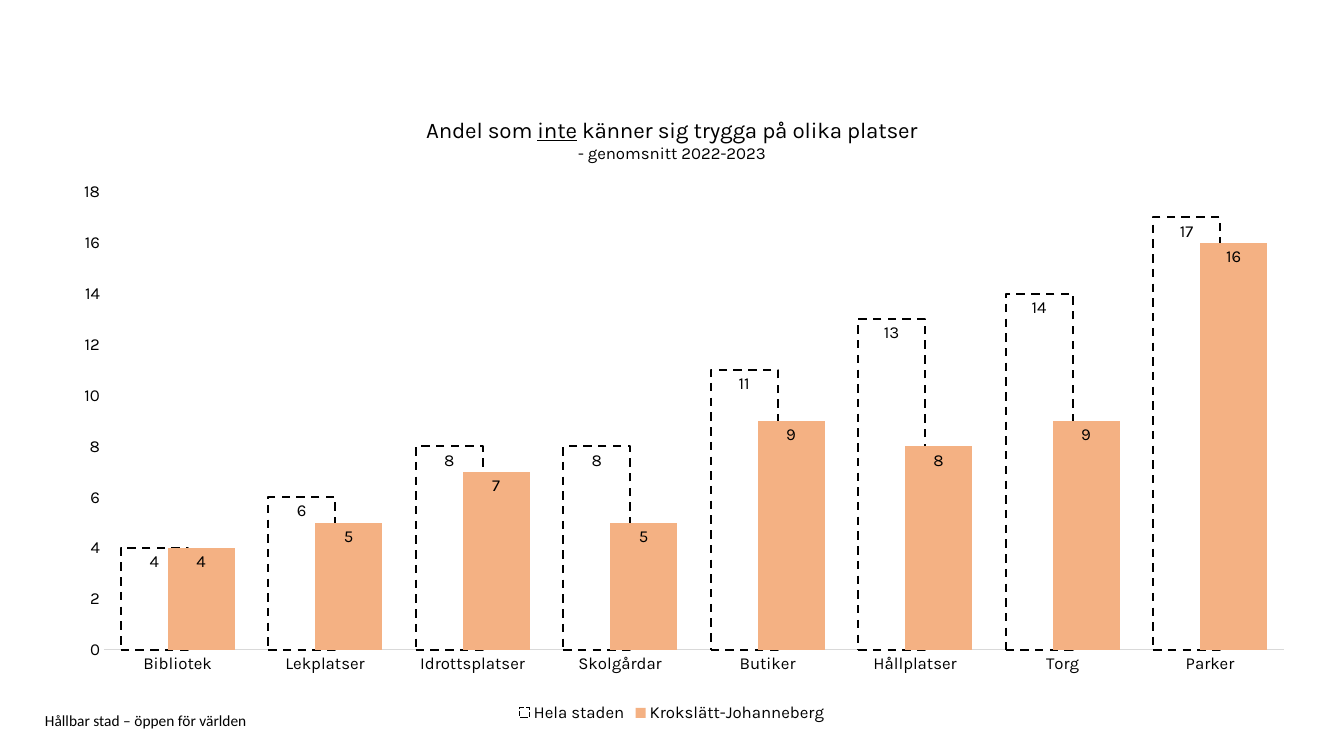
from lxml import etree
from pptx import Presentation
from pptx.chart.data import CategoryChartData
from pptx.dml.color import RGBColor
from pptx.enum.chart import XL_CHART_TYPE as ChartType
from pptx.enum.chart import XL_LABEL_POSITION as LabelPosition
from pptx.enum.chart import XL_LEGEND_POSITION as LegendPosition
from pptx.enum.chart import XL_TICK_MARK as TickMark
from pptx.enum.dml import MSO_LINE_DASH_STYLE as Dash
from pptx.enum.text import MSO_ANCHOR as Anchor
from pptx.oxml.ns import qn
from pptx.util import Pt

PX = 914400 / 100.8
BLACK = RGBColor(0x00, 0x00, 0x00)
WHITE = RGBColor(0xFF, 0xFF, 0xFF)
GREY = RGBColor(0xD9, 0xD9, 0xD9)
ORANGE = RGBColor(0xF4, 0xB1, 0x83)


def px(*lengths):
    return [round(length * PX) for length in lengths]


def add_span(para, text, size, font, underline=None):
    span = para.add_run()
    span.text = text
    span.font.size = Pt(size)
    span.font.name = font
    span.font.bold = False
    span.font.underline = underline
    span.font.color.rgb = BLACK


deck = Presentation()
deck.slide_width, deck.slide_height = px(1344, 756)
page = deck.slides.add_slide(deck.slide_layouts[6])

# Footer
footer = page.shapes.add_textbox(*px(45, 712, 953, 16)).text_frame
footer.word_wrap = True
footer.vertical_anchor = Anchor.MIDDLE
footer.margin_left = footer.margin_right = footer.margin_top = footer.margin_bottom = 0
add_span(footer.paragraphs[0], "Hållbar stad – öppen för världen", 11, "Calibri")

# Chart data
places = CategoryChartData(number_format="0")
places.categories = ["Bibliotek", "Lekplatser", "Idrottsplatser", "Skolgårdar",
                     "Butiker", "Hållplatser", "Torg", "Parker"]
places.add_series("Hela staden", [4, 6, 8, 8, 11, 13, 14, 17])
places.add_series("Krokslätt-Johanneberg", [4, 5, 7, 5, 9, 8, 9, 16])
chart = page.shapes.add_chart(
    ChartType.COLUMN_CLUSTERED, *px(45, 96, 1254, 631), places).chart
chart.font.name = "Karla"
chart.font.size = Pt(12)
chart.font.color.rgb = BLACK

# Title
chart.has_title = True
chart.chart_title.include_in_layout = False
title = chart.chart_title.text_frame
heading = title.paragraphs[0]
add_span(heading, "Andel som ", 16, "Karla")
add_span(heading, "inte", 16, "Karla", underline=True)
add_span(heading, " känner sig trygga på olika platser", 16, "Karla")
add_span(title.add_paragraph(), "- genomsnitt 2022-2023", 12, "Karla")

# Legend
chart.has_legend = True
chart.legend.position = LegendPosition.BOTTOM
chart.legend.include_in_layout = False

# Axes
for axis in (chart.category_axis, chart.value_axis):
    axis.has_major_gridlines = False
    axis.major_tick_mark = axis.minor_tick_mark = TickMark.NONE
chart.category_axis.format.line.color.rgb = GREY
chart.category_axis.format.line.width = Pt(0.75)
chart.value_axis.format.line.fill.background()
chart.value_axis.minimum_scale = 0
chart.value_axis.maximum_scale = 18
chart.value_axis.major_unit = 2
chart.value_axis.tick_labels.number_format = "0"
chart.value_axis.tick_labels.number_format_is_linked = False

# Columns and labels
plot = chart.plots[0]
plot.gap_width = 50
plot.overlap = 30
plot.vary_by_categories = False
for series, color in zip(plot.series, (WHITE, ORANGE)):
    series.invert_if_negative = False
    series.format.fill.solid()
    series.format.fill.fore_color.rgb = color
    labels = series.data_labels
    labels.show_value = True
    labels.position = LabelPosition.INSIDE_END
    labels.number_format = "0"
    labels.number_format_is_linked = False
city, district = plot.series
city.format.line.color.rgb = BLACK
city.format.line.width = Pt(1.5)
city.format.line.dash_style = Dash.DASH
district.format.line.fill.background()

# Inner plot area as shares of the chart frame
plot_area = chart._chartSpace.chart.plotArea
for old_layout in plot_area.findall(qn("c:layout")):
    plot_area.remove(old_layout)
layout = etree.Element(qn("c:layout"))
manual = etree.SubElement(layout, qn("c:manualLayout"))
for tag, value in (("layoutTarget", "inner"), ("xMode", "edge"), ("yMode", "edge"),
                   ("x", "0.047"), ("y", "0.152"), ("w", "0.941"), ("h", "0.726")):
    etree.SubElement(manual, qn("c:" + tag)).set("val", value)
plot_area.insert(0, layout)

deck.save("out.pptx")
